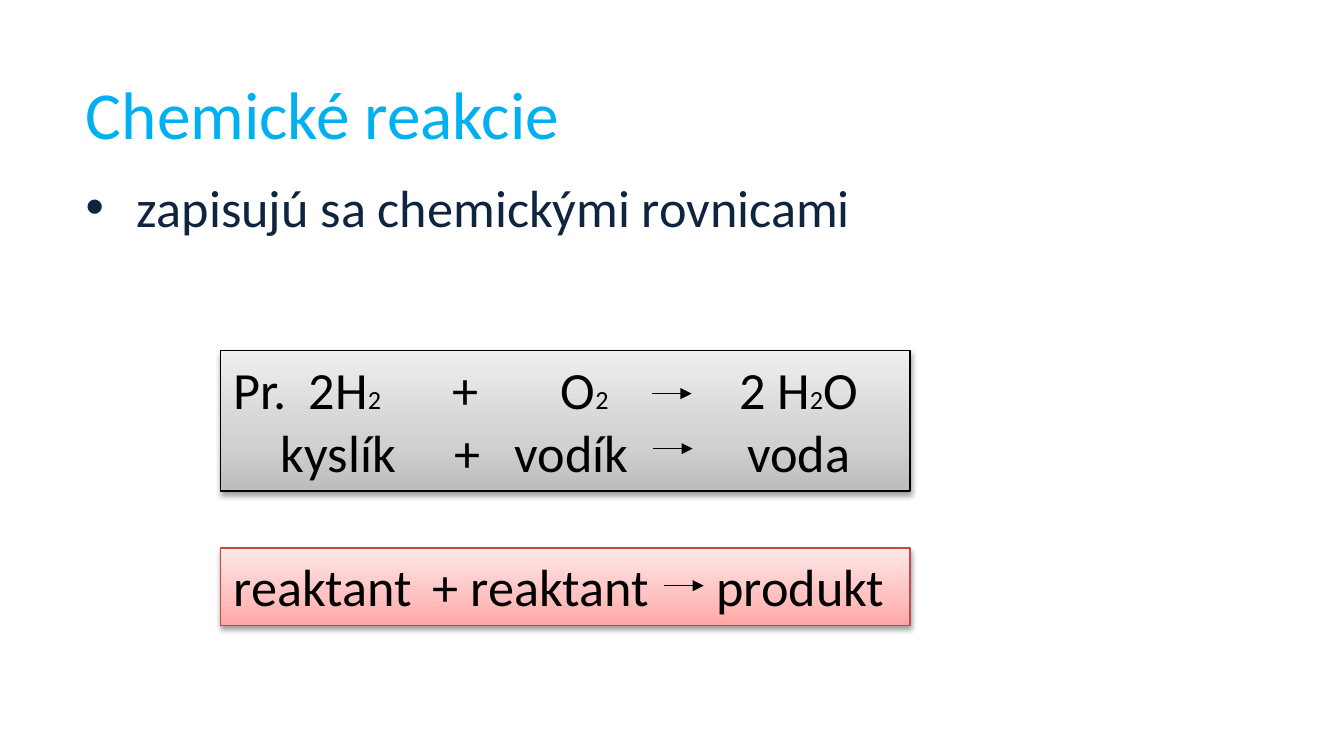
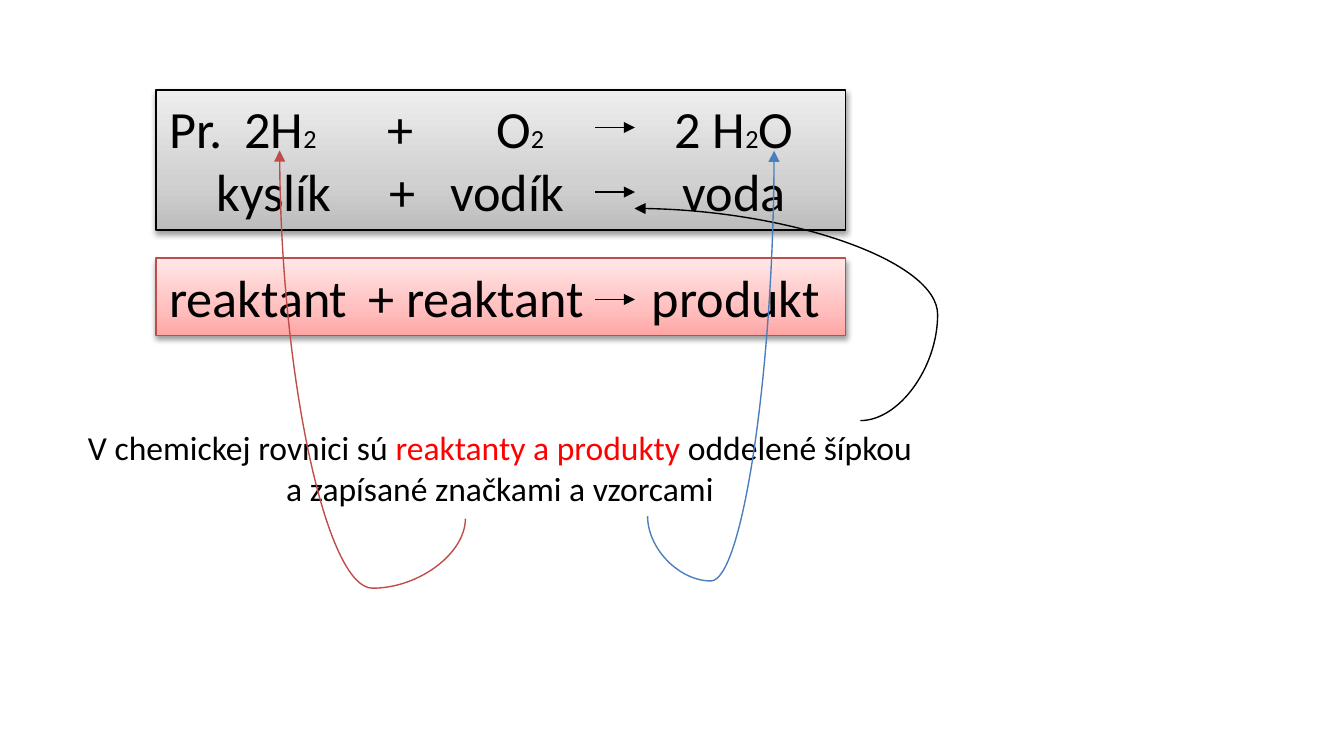
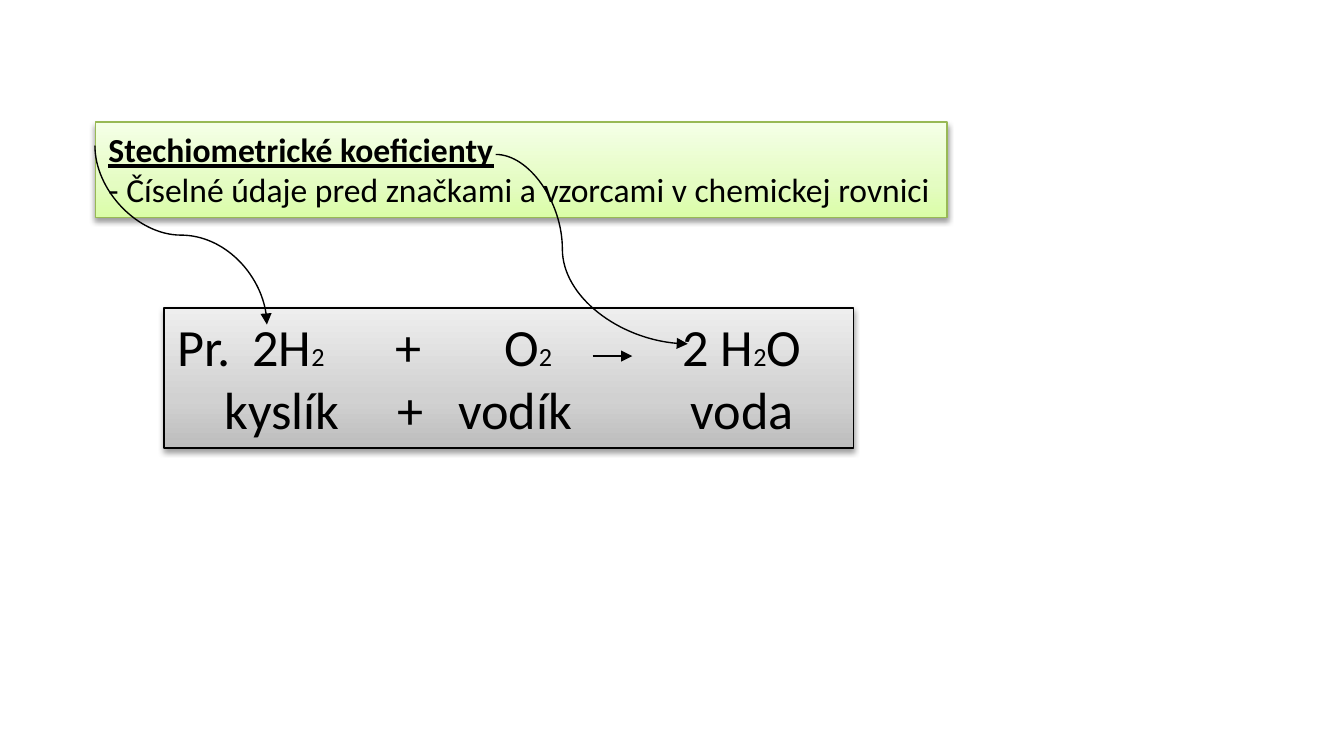
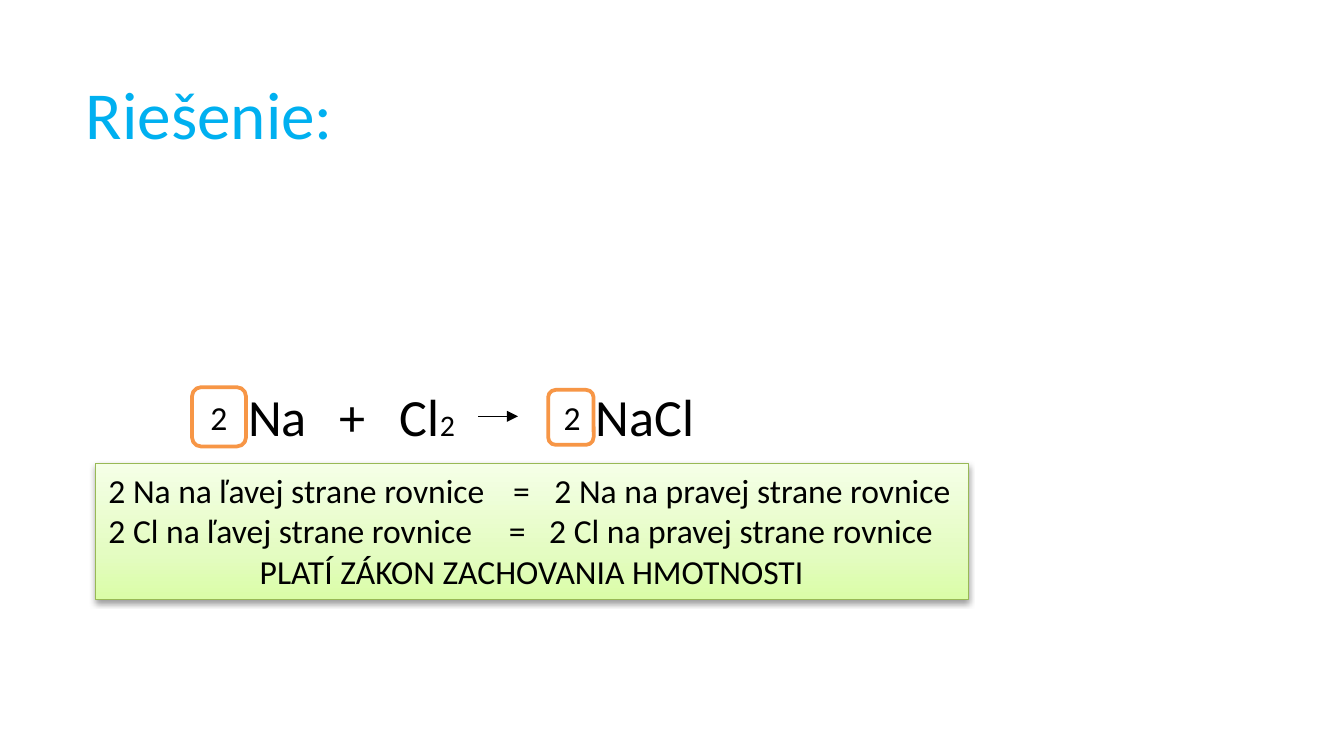
"""Build four slides about chemical reactions and their equations."""
from pptx import Presentation, oxml, util as u
from pptx.dml.color import RGBColor
from pptx.enum import shapes, text
from pptx.oxml.ns import nsdecls, qn

FONT = "Calibri"
BLACK, WHITE, RED, SKY, NAVY, ORANGE = "000000", "FFFFFF", "FF0000", "00B0F0", "0F243E", "F79646"
BRICK, BLUE = "BF4C48", "4B7EBC"
PANEL_STYLES = {
    "grey": (BLACK, ("BDBDBD", "D1D1D1", "EEEEEE")),
    "pink": (BRICK, ("FFA6A5", "FFC0BF", "FFE7E7")),
    "green": ("98B955", ("DAFDA7", "E4FCC2", "F5FFE7")),
}
STOPS = (0, 35000, 100000)
ARROW = 0.75


def write(box, rows, anchor=text.MSO_ANCHOR.TOP):
    """Write rows of (tab stops in cm, spans); a row without tab stops is centred."""
    frame = box.text_frame
    frame.word_wrap = True
    frame.auto_size = text.MSO_AUTO_SIZE.NONE
    frame.vertical_anchor = anchor
    for number, (tabs, spans) in enumerate(rows):
        para = frame.paragraphs[0] if number == 0 else frame.add_paragraph()
        para.alignment = text.PP_ALIGN.CENTER if tabs is None else text.PP_ALIGN.LEFT
        if tabs:
            stops = "".join(f'<a:tab pos="{u.Cm(tab)}" algn="l"/>' for tab in tabs)
            para._p.get_or_add_pPr().append(
                oxml.parse_xml(f'<a:tabLst {nsdecls("a")}>{stops}</a:tabLst>'))
        for words, size, colour, *strong in spans:
            span = para.add_run()
            span.text = words
            span.font.name = FONT
            span.font.size = u.Pt(size)
            span.font.color.rgb = RGBColor.from_string(colour)
            if strong:
                span.font.bold = span.font.underline = True


def connect(page, kind, ends, colour=BLACK):
    """Draw a thin connector with an arrowhead at its end, given corners in cm."""
    line = page.shapes.add_connector(kind, *(u.Cm(end) for end in ends))
    line.line.color.rgb = RGBColor.from_string(colour)
    line.line.width = u.Pt(0.75)
    line.line._get_or_add_ln().append(
        oxml.parse_xml(f'<a:tailEnd {nsdecls("a")} type="triangle"/>'))
    line._element.spPr.append(oxml.parse_xml(f'<a:effectLst {nsdecls("a")}/>'))
    return line


deck = Presentation()
deck.slide_width, deck.slide_height = u.Cm(25.4), u.Cm(14.29)

pages = []
for heading in ("Chemické reakcie", None, None, "Riešenie:"):
    page = deck.slides.add_slide(deck.slide_layouts[5 if heading else 6])
    pages.append(page)
    if heading:
        title = page.shapes.title
        title.left, title.top, title.width, title.height = map(u.Cm, (1.37, 1.12, 17.98, 2))
        write(title, [([], [(heading, 36, SKY)])], text.MSO_ANCHOR.MIDDLE)

equation = [
    ([1.42, 4.13, 6.18, 9.55],
     [("Pr.\t2H", 28, BLACK), ("2", 14, BLACK), ("\t+\tO", 28, BLACK), ("2", 14, BLACK),
      ("\t2 H", 28, BLACK), ("2", 14, BLACK), ("O", 28, BLACK)]),
    ([0.89, 4.17, 5.31, 9.7], [("\tkyslík\t+\tvodík\tvoda", 28, BLACK)]),
]
roles = [([3.76, 9.12], [("reaktant\t+ reaktant\tprodukt", 28, BLACK)])]
coefficients = [
    ([], [("Stechiometrické koeficienty", 18, BLACK, True)]),
    ([], [("- Číselné údaje pred značkami a vzorcami v chemickej rovnici", 18, BLACK)]),
]
balance = [
    ([7.65, 8.43], [("2 Na na ľavej strane rovnice\t=\t2 Na na pravej strane rovnice", 18, BLACK)]),
    ([7.57, 8.33], [("2 Cl na ľavej strane rovnice\t=\t2 Cl na pravej strane rovnice", 18, BLACK)]),
    (None, [("PLATÍ ZÁKON ZACHOVANIA HMOTNOSTI", 18, BLACK)]),
]

panels = [
    (0, "grey", (4.17, 6.63, 13.03, 2.65), equation),
    (0, "pink", (4.17, 10.36, 13.03, 1.46), roles),
    (1, "grey", (2.95, 1.7, 13.03, 2.65), equation),
    (1, "pink", (2.95, 4.88, 13.03, 1.46), roles),
    (2, "green", (1.8, 2.31, 16.1, 1.8), coefficients),
    (2, "grey", (3.1, 5.82, 13.03, 2.65), equation),
    (3, "green", (1.8, 8.76, 16.5, 2.57), balance),
]
for number, style, place, rows in panels:
    panel = pages[number].shapes.add_shape(shapes.MSO_SHAPE.RECTANGLE, *map(u.Cm, place))
    edge, shades = PANEL_STYLES[style]
    panel.line.color.rgb = RGBColor.from_string(edge)
    panel.line.width = u.Pt(0.75)
    panel.fill.background()
    properties = panel._element.spPr
    stops = "".join(f'<a:gs pos="{stop}"><a:srgbClr val="{shade}"/></a:gs>'
                    for stop, shade in zip(STOPS, shades))
    properties.replace(properties.find(qn("a:noFill")), oxml.parse_xml(
        f'<a:gradFill {nsdecls("a")} rotWithShape="1"><a:gsLst>{stops}</a:gsLst>'
        '<a:lin ang="16200000" scaled="1"/></a:gradFill>'))
    properties.append(oxml.parse_xml(
        f'<a:effectLst {nsdecls("a")}><a:outerShdw blurRad="40000" dist="20000" dir="5400000" '
        'rotWithShape="0"><a:srgbClr val="000000"><a:alpha val="38000"/></a:srgbClr>'
        '</a:outerShdw></a:effectLst>'))
    write(panel, rows)

bullet_box = pages[0].shapes.add_textbox(*map(u.Cm, (1.37, 3.18, 17.04, 2.49)))
bullet = bullet_box.text_frame.paragraphs[0]._p.get_or_add_pPr()
bullet.set("marL", str(u.Cm(0.97)))
bullet.set("indent", str(u.Cm(-0.97)))
bullet.append(oxml.parse_xml(f'<a:buFont {nsdecls("a")} typeface="Arial"/>'))
bullet.append(oxml.parse_xml(f'<a:buChar {nsdecls("a")} char="•"/>'))
write(bullet_box, [([], [("zapisujú sa chemickými rovnicami", 28, NAVY)])])

rule_box = pages[1].shapes.add_textbox(*map(u.Cm, (1.32, 7.95, 16.26, 1.8)))
write(rule_box, [(None, [
    ("V chemickej rovnici sú ", 18, BLACK), ("reaktanty a produkty ", 18, RED),
    ("oddelené šípkou a zapísané značkami a vzorcami", 18, BLACK)])])

salt_box = pages[3].shapes.add_textbox(*map(u.Cm, (4.44, 7.14, 9.5, 1.45)))
write(salt_box, [([1.73, 2.87, 6.57], [
    ("Na\t+\tCl", 28, BLACK), ("2", 16, BLACK), ("\tNaCl", 28, BLACK)])])

for place in ((3.63, 7.32, 1.02, 1.12), (10.36, 7.37, 0.86, 1.04)):
    answer = pages[3].shapes.add_shape(shapes.MSO_SHAPE.ROUNDED_RECTANGLE, *map(u.Cm, place))
    answer.shadow.inherit = False
    answer.fill.solid()
    answer.fill.fore_color.rgb = RGBColor.from_string(WHITE)
    answer.line.color.rgb = RGBColor.from_string(ORANGE)
    answer.line.width = u.Pt(2)
    write(answer, [(None, [("2", 18, BLACK)])], text.MSO_ANCHOR.MIDDLE)

arrows = [
    (0, 12.32, 7.44), (0, 12.34, 8.48), (0, 12.55, 11.07),
    (1, 11.25, 2.41), (1, 11.25, 3.63), (1, 11.25, 5.66),
    (2, 11.2, 6.73), (3, 9.04, 7.87),
]
for number, left, top in arrows:
    connect(pages[number], shapes.MSO_CONNECTOR.STRAIGHT, (left, top, left + ARROW, top))

curves = [
    (1, (11.99, 3.94, 4.27, 4.01), 180, "", -34200, BLACK),
    (1, (3.56, 4.57, 6.96, 3.51), 270, "V", -18900, BRICK),
    (1, (9.98, 5.11, 6.91, 2.39), 90, "HV", -17700, BLUE),
    (2, (1.73, 2.82, 3.38, 3.25), 270, "H", 50000, BLACK),
    (2, (9.37, 2.92, 3.63, 3.58), 0, "", 34700, BLACK),
]
for number, (left, top, width, height), angle, flips, bend, colour in curves:
    curve = connect(pages[number], shapes.MSO_CONNECTOR.CURVE,
                    (left, top, left + width, top + height), colour)
    properties = curve._element.spPr
    frame = properties.find(qn("a:xfrm"))
    frame.set("rot", str(angle * 60000))
    for flip in flips:
        frame.set(f"flip{flip}", "1")
    geometry = properties.find(qn("a:prstGeom"))
    geometry.set("prst", "curvedConnector3")
    geometry.find(qn("a:avLst")).append(
        oxml.parse_xml(f'<a:gd {nsdecls("a")} name="adj1" fmla="val {bend}"/>'))

deck.save("out.pptx")
